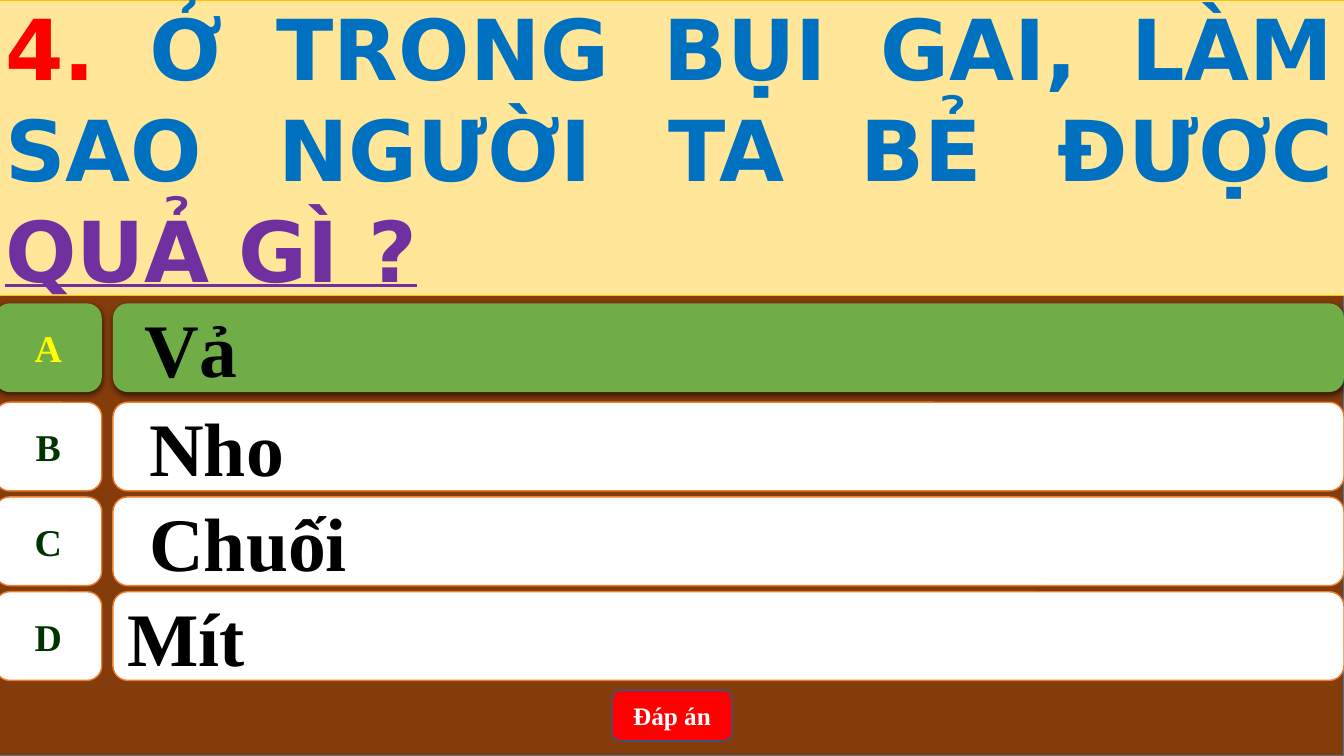
import pptx
import pptx.dml.color
import pptx.enum.shapes
import pptx.enum.text
import pptx.oxml
import pptx.oxml.ns
import pptx.util

SHAPE = pptx.enum.shapes.MSO_SHAPE
ALIGN = pptx.enum.text.PP_ALIGN
ANCHOR = pptx.enum.text.MSO_ANCHOR

SLIDE_WIDTH, SLIDE_HEIGHT = 13.33, 7.5
BLEED = 0.05
SERIF, SANS = "Times New Roman", "DejaVu Sans"
COLOURS = {
    "brown": "843C0B", "blue_edge": "43739E", "cream": "FFE699", "gold": "FFC000",
    "white": "FFFFFF", "orange": "ED7D31", "green": "70AD47", "dark_green": "003300",
    "yellow": "FFFF00", "black": "000000", "red": "FF0000", "button_edge": "325491",
    "blue": "0070C0", "purple": "7030A0",
}
ANSWERS = [("A", " Vả", 0), ("B", "Nho", 0.22), ("C", "Chuối", 0.22), ("D", "Mít", 0)]
CORRECT = "A"


def colour(name):
    return pptx.dml.color.RGBColor.from_string(COLOURS[name])


def paint(shape, fill, line=None, line_width=1):
    shape.fill.solid()
    shape.fill.fore_color.rgb = colour(fill)
    if line:
        shape.line.color.rgb = colour(line)
        shape.line.width = pptx.util.Pt(line_width)
    else:
        shape.line.fill.background()


def place(shape, box):
    shape.left, shape.top, shape.width, shape.height = map(pptx.util.Inches, box)


def add_box(shapes, kind, box, fill, line=None):
    shape = shapes.add_shape(kind, *map(pptx.util.Inches, box))
    shape.shadow.inherit = False
    paint(shape, fill, line)
    return shape


def add_drop_shadow(shape):
    effects = shape._element.spPr.find(pptx.oxml.ns.qn("a:effectLst"))
    effects.append(pptx.oxml.parse_xml(
        f'<a:outerShdw {pptx.oxml.ns.nsdecls("a")} blurRad="57150" dist="19050" '
        'dir="5400000" algn="ctr" rotWithShape="0"><a:srgbClr val="000000">'
        '<a:alpha val="63000"/></a:srgbClr></a:outerShdw>'))


def write(shape, text, size, color, font=SERIF, align=ALIGN.CENTER,
          underline=None, wrap=True, indent=0):
    """Append a bold run to the first paragraph of the shape."""
    frame = shape.text_frame
    frame.word_wrap = wrap
    frame.auto_size = pptx.enum.text.MSO_AUTO_SIZE.NONE
    frame.vertical_anchor = ANCHOR.MIDDLE
    paragraph = frame.paragraphs[0]
    paragraph.alignment = align
    if indent:
        paragraph._p.get_or_add_pPr().set("marL", str(pptx.util.Inches(indent)))
    run = paragraph.add_run()
    run.text = text
    run.font.size = pptx.util.Pt(size)
    run.font.name = font
    run.font.bold = True
    run.font.underline = underline
    run.font.color.rgb = colour(color)


def add_question(slide, box):
    title = slide.shapes.title
    place(title, box)
    paint(title, "cream", "gold", 0.5)
    for text, color, underline in [
            ("4. ", "red", None),
            ("Ở TRONG BỤI GAI, LÀM SAO NGƯỜI TA BẺ ĐƯỢC ", "blue", None),
            ("QUẢ GÌ ?", "purple", True)]:
        write(title, text, 60, color, font=SANS, align=ALIGN.JUSTIFY, underline=underline)


def add_answer(slide, box, letter, answer, indent):
    left, top, width, height = box
    label_width, gap = 1.06, 0.11
    correct = letter == CORRECT
    fill, line = ("green", None) if correct else ("white", "orange")
    shapes = slide.shapes.add_group_shape().shapes
    answer_left = left + label_width + gap
    bar = add_box(shapes, SHAPE.ROUNDED_RECTANGLE,
                  (answer_left, top, left + width - answer_left, height), fill, line)
    label = add_box(shapes, SHAPE.FLOWCHART_ALTERNATE_PROCESS,
                    (left, top, label_width, height), fill, line)
    write(bar, answer, 54, "black", align=ALIGN.LEFT, indent=indent)
    write(label, letter, 27, "yellow" if correct else "dark_green", wrap=False)
    if correct:
        add_drop_shadow(bar)
        add_drop_shadow(label)


def add_answers(slide, box):
    left, top, width, height = box
    pitch, row_height, first_gap = 0.94, 0.88, 0.04
    for row, (letter, answer, indent) in enumerate(ANSWERS):
        row_top = top + row * pitch + (first_gap if row else 0)
        add_answer(slide, (left, row_top, width, row_height), letter, answer, indent)


def add_answer_button(slide, box):
    button = add_box(slide.shapes, SHAPE.ROUNDED_RECTANGLE, box, "red", "button_edge")
    write(button, "Đáp án", 18, "white")


def build_quiz_slide(presentation):
    slide = presentation.slides.add_slide(presentation.slide_layouts[5])
    width = SLIDE_WIDTH + BLEED
    backdrop = add_box(slide.shapes, SHAPE.RECTANGLE,
                       (-BLEED, 0, width, SLIDE_HEIGHT), "brown", "blue_edge")
    slide.shapes.title._element.addprevious(backdrop._element)
    add_question(slide, (-BLEED, 0, width, 2.93))
    add_answers(slide, (-BLEED, 3.01, width, 3.74))
    button_width = 1.19
    add_answer_button(slide, ((SLIDE_WIDTH - button_width) / 2, 6.85, button_width, 0.5))


def main():
    presentation = pptx.Presentation()
    presentation.slide_width = pptx.util.Inches(SLIDE_WIDTH)
    presentation.slide_height = pptx.util.Inches(SLIDE_HEIGHT)
    build_quiz_slide(presentation)
    presentation.save("out.pptx")


if __name__ == "__main__":
    main()
